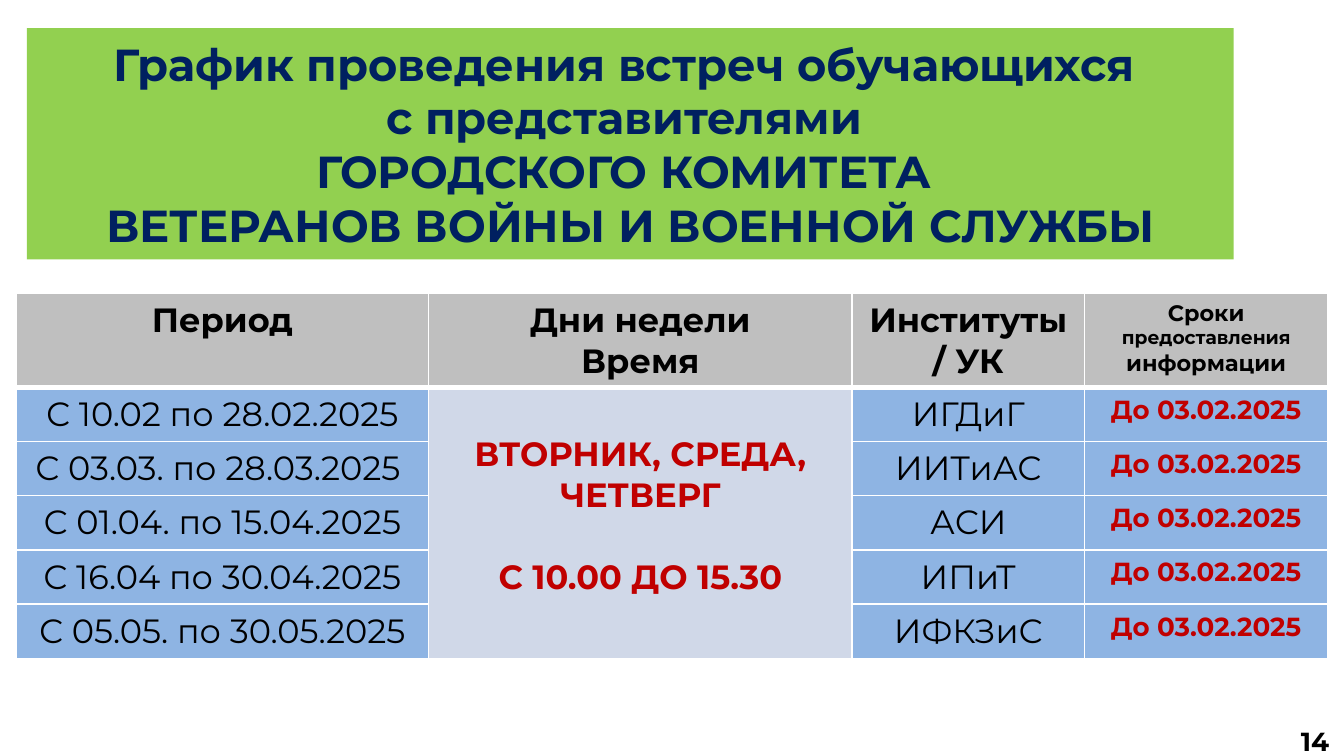
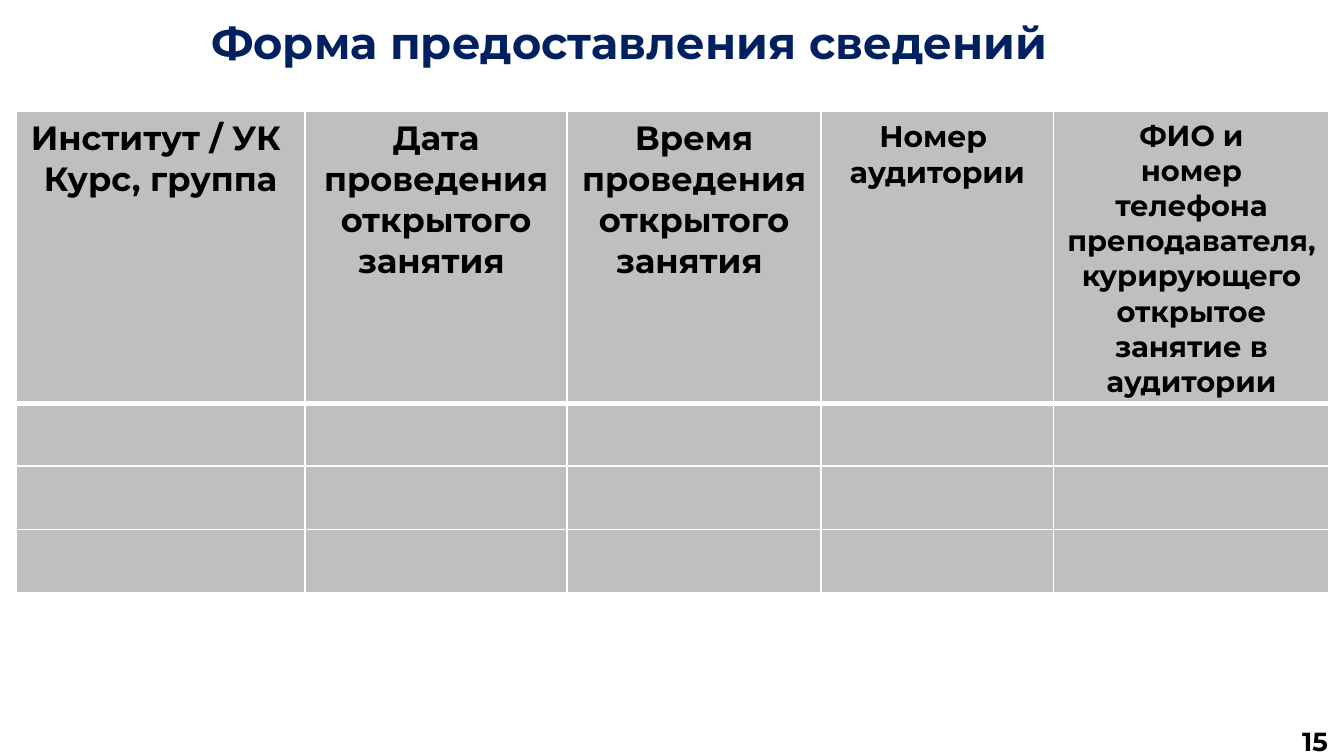
import dataclasses

import lxml.etree
import pptx
import pptx.dml.color
import pptx.enum.text
import pptx.oxml.ns
import pptx.util

Inches = pptx.util.Inches


@dataclasses.dataclass(frozen=True)
class Theme:
    font: str = "Montserrat"
    navy: str = "002060"
    black: str = "000000"
    white: str = "FFFFFF"
    red: str = "C00000"
    green: str = "92D050"
    grey: str = "BFBFBF"
    blue: str = "8EB4E3"
    pale: str = "D0D8E8"
    title_size: float = 24
    table_size: float = 18
    room_size: float = 16
    teacher_size: float = 15.5
    deadline_size: float = 14
    page_size: float = 14
    note_size: float = 12
    small_size: float = 10


THEME = Theme()
TABLE_LEFT = 0.12
HEADER_BORDERS = {"lnL": 1, "lnR": 1, "lnT": 1, "lnB": 3}
SCHEDULE = [
    ("С 10.02 по 28.02.2025", "ИГДиГ"),
    ("С 03.03. по 28.03.2025 ", "ИИТиАС"),
    ("С 01.04. по 15.04.2025", "АСИ"),
    ("С 16.04 по 30.04.2025", "ИПиТ"),
    ("С 05.05. по 30.05.2025", "ИФКЗиС"),
]
DEADLINE = "До 03.02.2025"


def rgb(colour):
    return pptx.dml.color.RGBColor.from_string(colour)


def paint(target, colour):
    target.fill.solid()
    target.fill.fore_color.rgb = rgb(colour)


def format_run(run, size, colour=THEME.black, bold=True):
    run.font.name = THEME.font
    run.font.size = pptx.util.Pt(size)
    run.font.bold = bold
    run.font.color.rgb = rgb(colour)


def write(frame, text, size, colour=THEME.black, bold=True):
    """Put centred text in a frame, one paragraph per line."""
    frame.text = text
    for paragraph in frame.paragraphs:
        paragraph.alignment = pptx.enum.text.PP_ALIGN.CENTER
        for run in paragraph.runs:
            format_run(run, size, colour, bold)


def fill_cell(cell, text, size=THEME.table_size, colour=THEME.black,
              bold=True, background=THEME.grey):
    paint(cell, background)
    write(cell.text_frame, text, size, colour, bold)


def border_header(cell):
    """Outline a header cell in white, with a heavy line below."""
    qn = pptx.oxml.ns.qn
    properties = cell._tc.get_or_add_tcPr()
    for position, (side, points) in enumerate(HEADER_BORDERS.items()):
        line = lxml.etree.Element(qn(f"a:{side}"), w=str(pptx.util.Pt(points)))
        fill = lxml.etree.SubElement(line, qn("a:solidFill"))
        lxml.etree.SubElement(fill, qn("a:srgbClr"), val=THEME.white)
        properties.insert(position, line)


def add_titled_slide(deck, title, box, page):
    slide = deck.slides.add_slide(deck.slide_layouts[5])
    heading = slide.shapes.title
    heading.left, heading.top, heading.width, heading.height = map(Inches, box)
    heading.text_frame.word_wrap = True
    heading.text_frame.auto_size = pptx.enum.text.MSO_AUTO_SIZE.NONE
    write(heading.text_frame, title, THEME.title_size, THEME.navy)

    number = slide.shapes.add_textbox(
        Inches(9.57), Inches(5.35), Inches(0.43), Inches(0.29)).text_frame
    number.word_wrap = True
    number.margin_left = number.margin_right = 0
    write(number, str(page), THEME.page_size)
    return slide


def add_grid(slide, top, widths, heights):
    grid = slide.shapes.add_table(
        len(heights), len(widths), Inches(TABLE_LEFT), Inches(top),
        Inches(sum(widths)), Inches(sum(heights))).table
    for column, width in zip(grid.columns, widths):
        column.width = Inches(width)
    for row, height in zip(grid.rows, heights):
        row.height = Inches(height)
    for column in range(len(widths)):
        border_header(grid.cell(0, column))
    return grid


def fill_deadline_header(cell):
    fill_cell(cell, "Сроки ", THEME.note_size)
    paragraph = cell.text_frame.paragraphs[0]
    for word, size in (("предоставления ", THEME.small_size),
                       ("информации", THEME.note_size)):
        run = paragraph.add_run()
        run.text = word
        format_run(run, size)


def fill_meeting_times(grid):
    """Merge the second column below its header and write the shared times."""
    times = grid.cell(1, 1)
    times.merge(grid.cell(len(SCHEDULE), 1))
    fill_cell(times, "ВТОРНИК, СРЕДА, ЧЕТВЕРГ\nС 10.00 ДО 15.30",
              colour=THEME.red, background=THEME.pale)
    times.margin_top = Inches(0.35)
    times.text_frame.paragraphs[1].space_before = pptx.util.Pt(22)


def build_schedule(deck):
    slide = add_titled_slide(
        deck,
        "График проведения встреч обучающихся \nс представителями \n"
        "ГОРОДСКОГО КОМИТЕТА \nВЕТЕРАНОВ ВОЙНЫ И ВОЕННОЙ СЛУЖБЫ",
        (0.2, 0.21, 8.98, 1.72), 14)
    paint(slide.shapes.title, THEME.green)

    table_height, header_height = 2.72, 0.7
    row_height = (table_height - header_height) / len(SCHEDULE)
    grid = add_grid(slide, 2.18, [3.07, 3.15, 1.73, 1.81],
                    [header_height] + [row_height] * len(SCHEDULE))
    for column, header in enumerate(
            ("Период", "Дни недели\nВремя", "Институты / УК")):
        fill_cell(grid.cell(0, column), header)
    fill_deadline_header(grid.cell(0, 3))
    fill_meeting_times(grid)
    for row, (period, institute) in enumerate(SCHEDULE, start=1):
        for column, text in ((0, period), (2, institute)):
            fill_cell(grid.cell(row, column), text, bold=False,
                      background=THEME.blue)
        fill_cell(grid.cell(row, 3), DEADLINE, THEME.deadline_size,
                  THEME.red, background=THEME.blue)


def build_report_form(deck):
    slide = add_titled_slide(deck, "Форма предоставления сведений",
                             (0.19, 0.06, 8.98, 0.5), 15)
    headers = [
        ("Институт / УК \nКурс, группа", THEME.table_size),
        ("Дата проведения открытого занятия ", THEME.table_size),
        ("Время проведения открытого занятия ", THEME.table_size),
        ("Номер \nаудитории", THEME.room_size),
        ("ФИО и\nномер телефона преподавателя, курирующего открытое "
         "занятие в аудитории", THEME.teacher_size),
    ]
    blank_rows = 3
    grid = add_grid(slide, 0.83, [2.15, 1.95, 1.89, 1.73, 2.05],
                    [2.17] + [0.47] * blank_rows)
    for column, (header, size) in enumerate(headers):
        fill_cell(grid.cell(0, column), header, size)
        for row in range(1, blank_rows + 1):
            paint(grid.cell(row, column), THEME.grey)


def main():
    deck = pptx.Presentation()
    deck.slide_width = Inches(10)
    deck.slide_height = deck.slide_width * 9 // 16
    build_schedule(deck)
    build_report_form(deck)
    deck.save("out.pptx")


if __name__ == "__main__":
    main()
